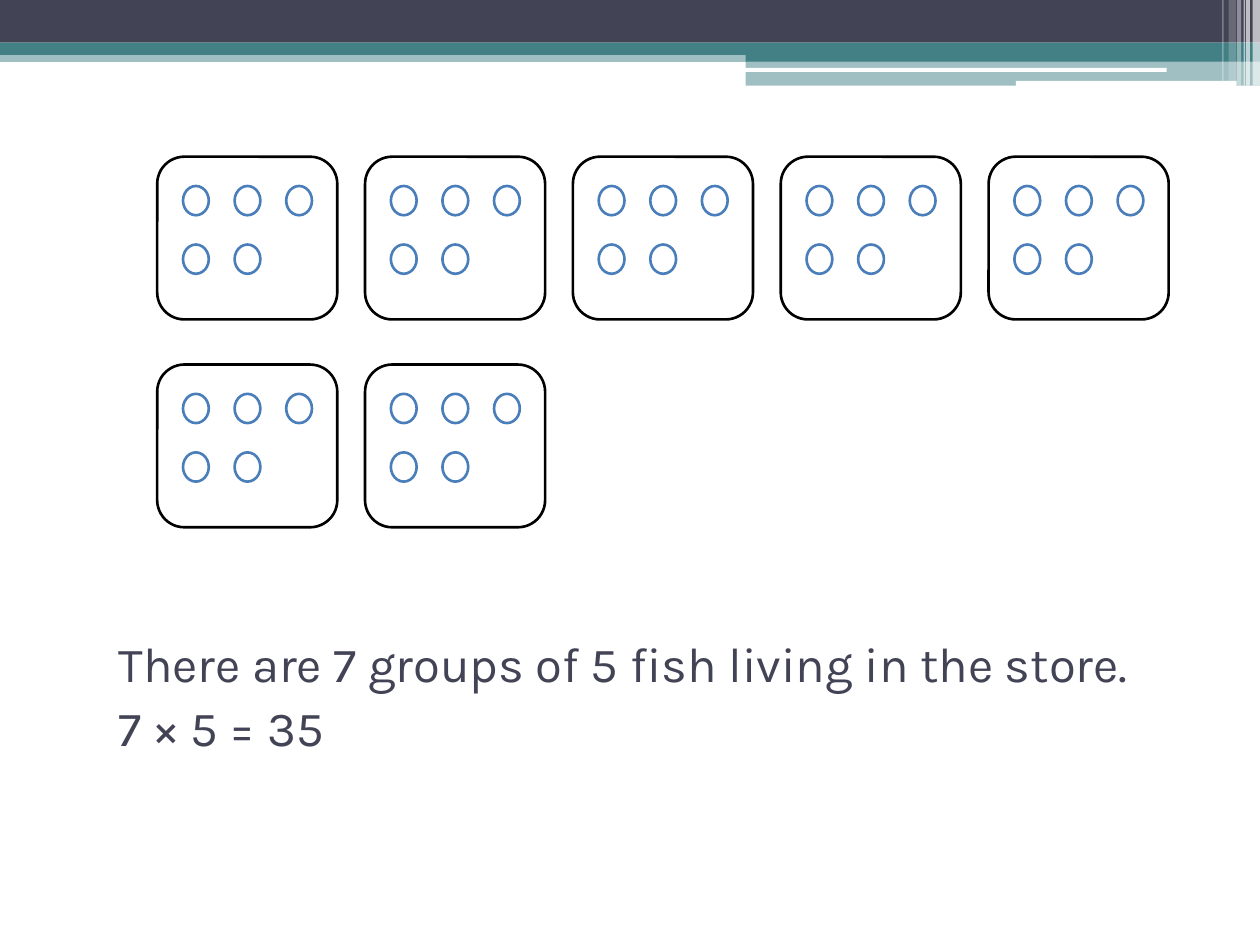
from lxml import etree
from pptx import Presentation
from pptx import util as u
from pptx.dml.color import RGBColor
from pptx.enum import shapes, text
from pptx.oxml import ns

WHITE = RGBColor(0xFF, 0xFF, 0xFF)
BLACK = RGBColor(0x00, 0x00, 0x00)
SLATE = RGBColor(0x42, 0x44, 0x56)
TEAL = RGBColor(0x43, 0x80, 0x86)
BLUE = RGBColor(0x4A, 0x7E, 0xBB)

RECT = shapes.MSO_SHAPE.RECTANGLE
ROUNDED = shapes.MSO_SHAPE.ROUNDED_RECTANGLE
OVAL = shapes.MSO_SHAPE.OVAL

WIDTH = 25.4
BANDS = [
    (RECT, 0, 1.02, WIDTH, 0.23, TEAL, 50),
    (RECT, 0, 0, WIDTH, 0.86, SLATE, 100),
    (RECT, 0, 0.86, WIDTH, 0.25, TEAL, 100),
    (RECT, 15.03, 0.99, 10.37, 0.25, TEAL, 100),
    (RECT, 15.03, 1.23, 10.37, 0.5, TEAL, 50),
    (ROUNDED, 15.01, 1.37, 8.51, 0.08, WHITE, 100),
    (ROUNDED, 20.48, 1.63, 4.45, 0.1, WHITE, 100),
]
STRIPES = [
    (25.25, 0.15, 1.73, 65),
    (25.12, 0.08, 1.73, 65),
    (25.07, 0.03, 1.73, 60),
    (24.94, 0.08, 1.73, 40),
    (24.77, 0.15, 1.63, 20),
    (24.64, 0.03, 1.63, 30),
]
TANKS, TANKS_PER_ROW, TANK_PITCH = 7, 5, 4.19
FISH, FISH_PER_ROW = 5, 3
LINES = ["There are 7 groups of 5 fish living in the store.", "7 × 5 = 35"]


class FishSlide:
    font = "Karla"
    size = u.Pt(28)
    outline = u.Pt(1.5)

    def __init__(self, deck):
        self.page = deck.slides.add_slide(deck.slide_layouts[1])
        title = self.page.shapes.title._element
        title.getparent().remove(title)

    def shape(self, parent, kind, left, top, width, height):
        shape = parent.add_shape(kind, u.Cm(left), u.Cm(top), u.Cm(width), u.Cm(height))
        shape.shadow.inherit = False
        return shape

    def band(self, kind, left, top, width, height, colour, opacity):
        band = self.shape(self.page.shapes, kind, left, top, width, height)
        band.fill.solid()
        band.fill.fore_color.rgb = colour
        band.line.fill.background()
        if opacity < 100:
            tint = band.fill._xPr.find(".//" + ns.qn("a:srgbClr"))
            etree.SubElement(tint, ns.qn("a:alpha"), val=str(opacity * 1000))

    def ring(self, parent, kind, left, top, width, height, colour):
        ring = self.shape(parent, kind, left, top, width, height)
        ring.fill.background()
        ring.line.color.rgb = colour
        ring.line.width = self.outline

    def tank(self, left, top):
        group = self.page.shapes.add_group_shape().shapes
        self.ring(group, ROUNDED, left, top, 3.63, 3.28, BLACK)
        for fish in range(FISH):
            row, column = divmod(fish, FISH_PER_ROW)
            self.ring(group, OVAL, left + 0.52 + 1.04 * column,
                      top + 0.59 + 1.18 * row, 0.52, 0.59, BLUE)

    def body(self, lines, left, top, width, height):
        box = self.page.placeholders[1]
        box.left, box.top = u.Cm(left), u.Cm(top)
        box.width, box.height = u.Cm(width), u.Cm(height)
        frame = box.text_frame
        frame.word_wrap = True
        frame.auto_size = text.MSO_AUTO_SIZE.NONE
        frame.vertical_anchor = text.MSO_ANCHOR.TOP
        for index, line in enumerate(lines):
            para = frame.add_paragraph() if index else frame.paragraphs[0]
            para.alignment = text.PP_ALIGN.LEFT
            para.space_before = u.Pt(3)
            properties = para._p.get_or_add_pPr()
            properties.set("marL", str(u.Cm(0.13)))
            properties.set("indent", "0")
            etree.SubElement(properties, ns.qn("a:buNone"))
            span = para.add_run()
            span.text = line
            span.font.name = self.font
            span.font.size = self.size
            span.font.color.rgb = SLATE


def main():
    deck = Presentation()
    deck.slide_width, deck.slide_height = u.Cm(WIDTH), u.Cm(19.05)
    slide = FishSlide(deck)
    for band in BANDS:
        slide.band(*band)
    for left, width, height, opacity in STRIPES:
        slide.band(RECT, left, 0, width, height, WHITE, opacity)
    slide.body(LINES, 2.01, 12.65, 21.59, 2.95)
    for tank in range(TANKS):
        row, column = divmod(tank, TANKS_PER_ROW)
        slide.tank(3.17 + TANK_PITCH * column, 3.16 + TANK_PITCH * row)
    deck.save("out.pptx")


if __name__ == "__main__":
    main()
